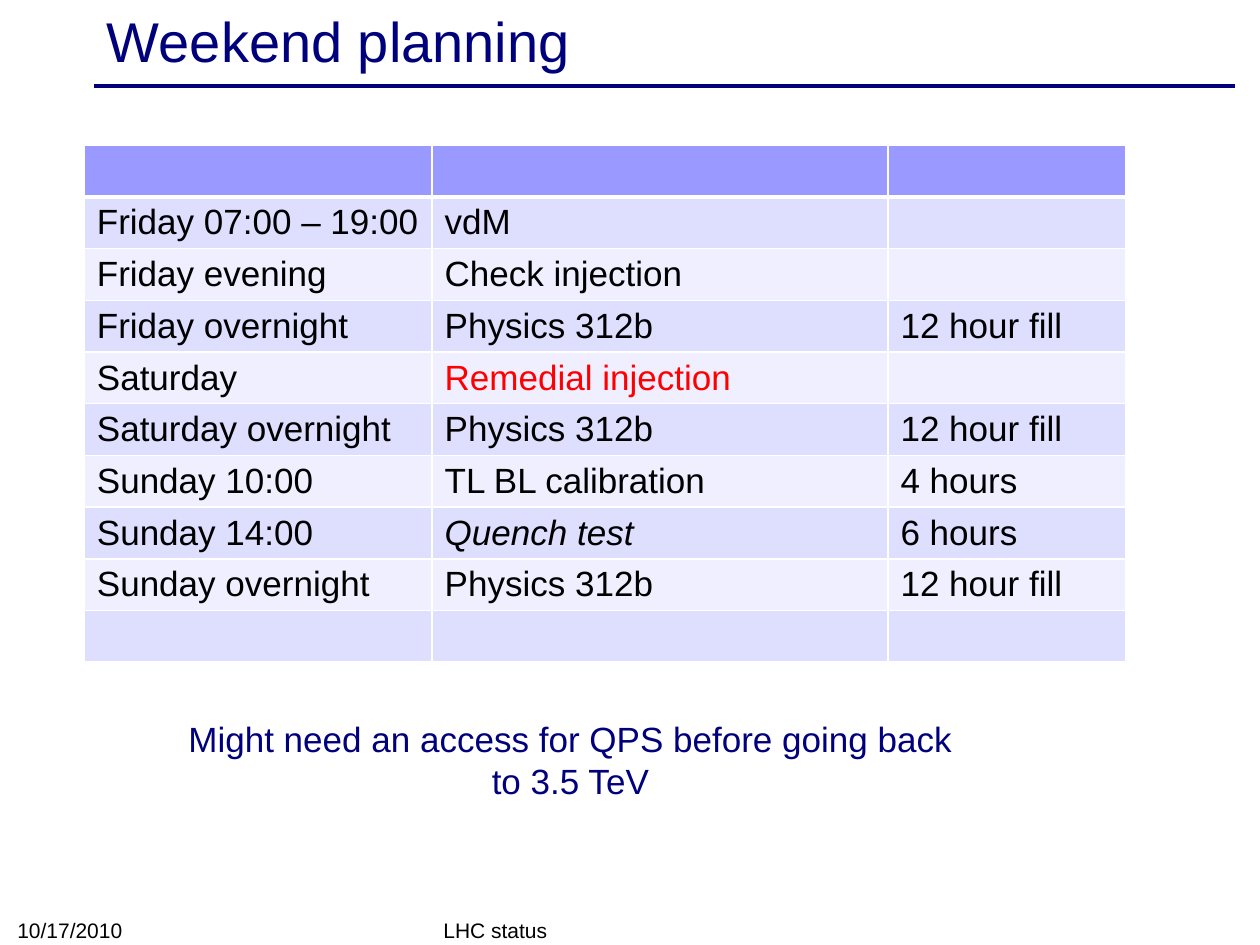
from typing import NamedTuple

import pptx
import pptx.dml.color
import pptx.enum.shapes
import pptx.enum.text
import pptx.oxml
import pptx.oxml.ns
import pptx.util

Cm = pptx.util.Cm
Pt = pptx.util.Pt
RGBColor = pptx.dml.color.RGBColor
ANCHOR = pptx.enum.text.MSO_ANCHOR
ALIGN = pptx.enum.text.PP_ALIGN

NAVY = RGBColor(0x00, 0x00, 0x7D)
BLACK = RGBColor(0, 0, 0)
RED = RGBColor(0xFF, 0, 0)
HEADER = RGBColor(0x99, 0x99, 0xFF)
BANDS = (RGBColor(0xDE, 0xDE, 0xFF), RGBColor(0xEF, 0xEF, 0xFF))
FONT = "Arial"


class Slot(NamedTuple):
    """One row of the weekend schedule."""
    time: str = ""
    activity: str = ""
    duration: str = ""
    color: RGBColor = BLACK
    italic: bool = False


class Label(NamedTuple):
    """A text box, with its frame in centimetres."""
    text: str
    frame: tuple[float, float, float, float]
    size: int
    color: RGBColor
    align: ALIGN
    anchor: ANCHOR


SCHEDULE = (
    Slot("Friday 07:00 – 19:00", "vdM"),
    Slot("Friday evening", "Check injection"),
    Slot("Friday overnight", "Physics 312b", "12 hour fill"),
    Slot("Saturday ", "Remedial injection", color=RED),
    Slot("Saturday overnight ", "Physics 312b", "12 hour fill"),
    Slot("Sunday 10:00", "TL BL calibration ", "4 hours"),
    Slot("Sunday 14:00", "Quench test", "6 hours", italic=True),
    Slot("Sunday overnight", "Physics 312b", "12 hour fill"),
    Slot(),
)
COLUMN_WIDTHS = (7.01, 9.19, 4.8)
ROW_HEIGHT = 1.04

LABELS = (
    Label("Might need an access for QPS before going back to 3.5 TeV",
          (3.5, 14.33, 16, 1.96), 20, NAVY, ALIGN.CENTER, ANCHOR.TOP),
    Label("LHC status", (8.69, 18.41, 8.05, 0.71), 12, BLACK,
          ALIGN.LEFT, ANCHOR.BOTTOM),
    Label("10/17/2010", (0.1, 18.39, 5.92, 0.74), 12, BLACK,
          ALIGN.LEFT, ANCHOR.BOTTOM),
)


def set_text(frame, text: str, size: int, color: RGBColor,
             align: ALIGN = ALIGN.LEFT, italic: bool = False) -> None:
    frame.text = text
    para = frame.paragraphs[0]
    para.alignment = align
    para.space_before = Pt(0)
    for span in para.runs:
        span.font.name = FONT
        span.font.size = Pt(size)
        span.font.color.rgb = color
        span.font.italic = italic


def add_label(page, label: Label) -> None:
    box = page.shapes.add_textbox(*map(Cm, label.frame))
    frame = box.text_frame
    frame.word_wrap = True
    frame.vertical_anchor = label.anchor
    set_text(frame, label.text, label.size, label.color, label.align)


def set_borders(cell, top: float, bottom: float) -> None:
    properties = cell._tc.get_or_add_tcPr()
    for side, width in (("L", 1), ("R", 1), ("T", top), ("B", bottom)):
        properties.append(pptx.oxml.parse_xml(
            f'<a:ln{side} {pptx.oxml.ns.nsdecls("a")} w="{Pt(width)}">'
            f'<a:solidFill><a:srgbClr val="FFFFFF"/></a:solidFill></a:ln{side}>'))


def add_schedule(page) -> None:
    rows = (Slot(),) + SCHEDULE
    table = page.shapes.add_table(
        len(rows), len(COLUMN_WIDTHS), Cm(1.7), Cm(2.93),
        Cm(sum(COLUMN_WIDTHS)), Cm(ROW_HEIGHT * len(rows))).table
    for column, width in zip(table.columns, COLUMN_WIDTHS):
        column.width = Cm(width)
    for index, slot in enumerate(rows):
        table.rows[index].height = Cm(ROW_HEIGHT)
        for position, text in enumerate((slot.time, slot.activity, slot.duration)):
            cell = table.cell(index, position)
            set_borders(cell, 3 if index == 1 else 1, 3 if index == 0 else 1)
            cell.fill.solid()
            cell.fill.fore_color.rgb = BANDS[(index - 1) % 2] if index else HEADER
            is_activity = position == 1
            if text:
                set_text(cell.text_frame, text, 20,
                         slot.color if is_activity else BLACK,
                         italic=slot.italic and is_activity)


def add_title(page) -> None:
    title = page.shapes.title
    title.left, title.top, title.width, title.height = map(
        Cm, (1.9, 0.08, 22.86, 1.45))
    title.text_frame.vertical_anchor = ANCHOR.MIDDLE
    set_text(title.text_frame, "Weekend planning", 32, NAVY)

    # Rule below the title
    rule = page.shapes.add_connector(
        pptx.enum.shapes.MSO_CONNECTOR.STRAIGHT,
        Cm(1.9), Cm(1.73), Cm(24.9), Cm(1.73))
    rule.line.color.rgb = NAVY
    rule.line.width = Pt(2)
    rule._element.spPr.append(pptx.oxml.parse_xml(
        f'<a:effectLst {pptx.oxml.ns.nsdecls("a")}/>'))


def main() -> None:
    deck = pptx.Presentation()
    deck.slide_width, deck.slide_height = Cm(25.4), Cm(19.05)
    page = deck.slides.add_slide(deck.slide_layouts[5])

    add_title(page)
    add_schedule(page)

    # Remark and footer
    for label in LABELS:
        add_label(page, label)

    deck.save("out.pptx")


if __name__ == "__main__":
    main()
